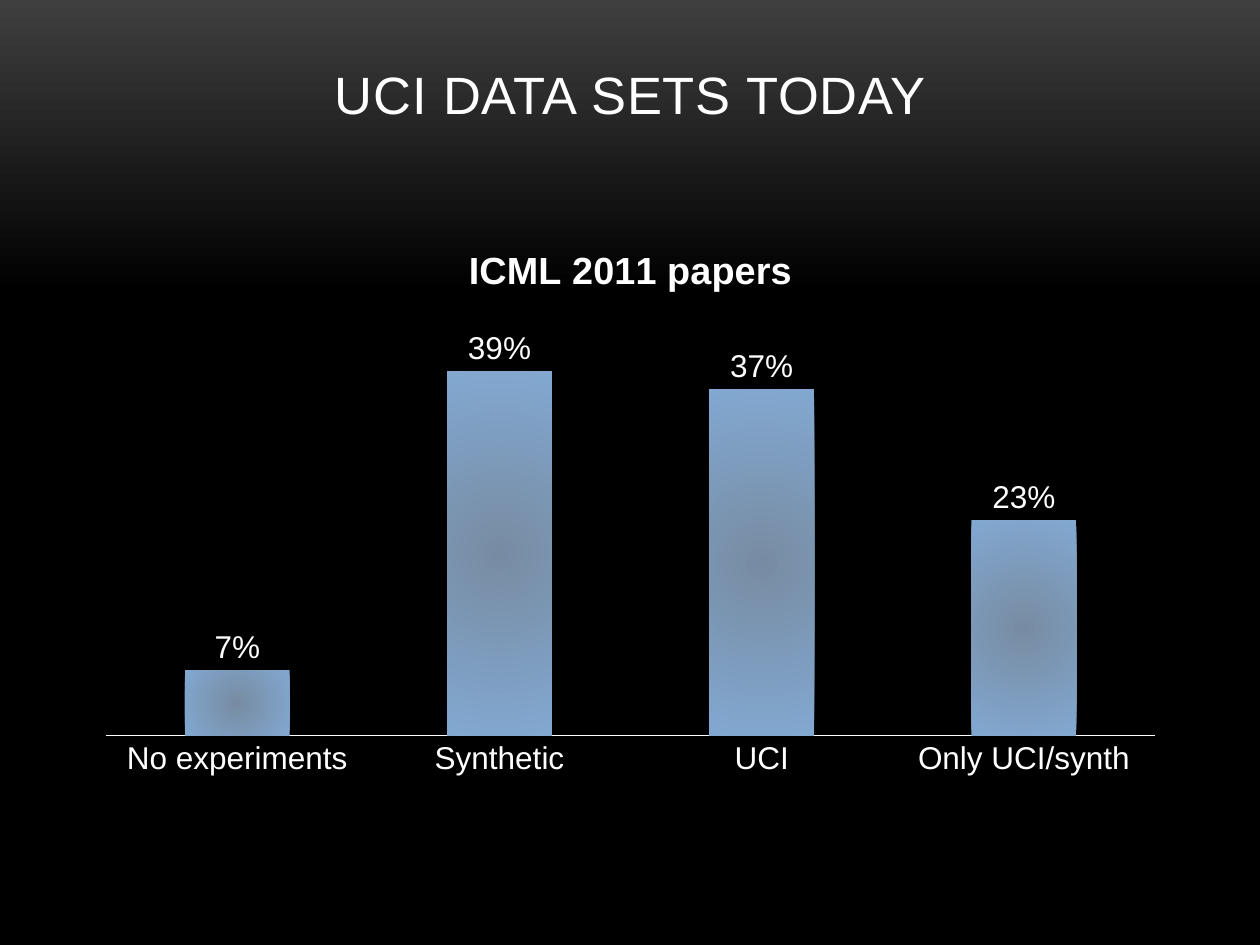
from lxml import etree
from pptx import Presentation
from pptx.chart.data import CategoryChartData
from pptx.dml.color import RGBColor
from pptx.enum.chart import XL_CHART_TYPE, XL_LABEL_POSITION, XL_TICK_MARK
from pptx.enum.text import MSO_ANCHOR, PP_ALIGN
from pptx.oxml import parse_xml
from pptx.oxml.ns import nsdecls, qn
from pptx.util import Inches, Pt

WHITE = RGBColor(0xFF, 0xFF, 0xFF)
BLACK = RGBColor(0, 0, 0)
CHARCOAL = RGBColor(0x3F, 0x3F, 0x3F)
BAR_CENTER = RGBColor(0x77, 0x8C, 0xA3)
BAR_EDGE = RGBColor(0x82, 0xA8, 0xD0)
FONT = "Arial"


def set_gradient(fill, stops):
    fill.gradient()
    for stop, (position, color) in zip(fill.gradient_stops, stops):
        stop.position = position
        stop.color.rgb = color


def set_font(font, size, bold=False):
    font.name = FONT
    font.size = Pt(size)
    font.bold = bold
    font.color.rgb = WHITE


prs = Presentation()
prs.slide_width, prs.slide_height = Inches(10), Inches(7.5)
s = prs.slides.add_slide(prs.slide_layouts[5])

# Background: charcoal fading down to black
bg = s.background.fill
set_gradient(bg, [(0, CHARCOAL), (0.31, BLACK)])
bg.gradient_angle = 270

# Title
title = s.shapes.title
title.left, title.top = Inches(0.67), Inches(0.3)
title.width, title.height = Inches(8.67), Inches(0.74)
tf = title.text_frame
tf.vertical_anchor = MSO_ANCHOR.BOTTOM
p = tf.paragraphs[0]
p.alignment = PP_ALIGN.CENTER
r = p.add_run()
r.text = "UCI DATA SETS TODAY"
set_font(r.font, 30)
r.font._element.set("spc", "50")

# Chart
data = CategoryChartData(number_format="0%")
data.categories = ["No experiments", "Synthetic", "UCI", "Only UCI/synth"]
data.add_series("ICML 2011 papers", [0.07, 0.39, 0.37, 0.23])
chart = s.shapes.add_chart(
    XL_CHART_TYPE.COLUMN_CLUSTERED,
    Inches(0.67), Inches(1.75), Inches(8.67), Inches(4.5), data,
).chart
set_font(chart.font, 18)
chart.has_legend = False
chart.has_title = True
r = chart.chart_title.text_frame.paragraphs[0].add_run()
r.text = "ICML 2011 papers"
set_font(r.font, 21.6, bold=True)

# Axes
cat_axis = chart.category_axis
cat_axis.major_tick_mark = XL_TICK_MARK.NONE
cat_axis.format.line.color.rgb = WHITE
cat_axis.format.line.width = Pt(0.75)
val_axis = chart.value_axis
val_axis.visible = False
val_axis.has_major_gridlines = False
val_axis.tick_labels.number_format = "0%"
val_axis.tick_labels.number_format_is_linked = False

# Bars and labels
plot = chart.plots[0]
plot.gap_width = 150
plot.overlap = -25
plot.vary_by_categories = False
plot.has_data_labels = True
labels = plot.data_labels
labels.show_value = True
labels.number_format = "0%"
labels.number_format_is_linked = False
labels.position = XL_LABEL_POSITION.OUTSIDE_END
set_font(labels.font, 18)

# Radial bar gradient replaces the default linear one
bar_format = plot.series[0].format
set_gradient(bar_format.fill, [(0, BAR_CENTER), (1, BAR_EDGE)])
linear = next(plot.series[0]._element.iter(qn("a:lin")))
radial = parse_xml(f'<a:path {nsdecls("a")} path="circle"/>')
etree.SubElement(radial, qn("a:fillToRect"), l="50000", t="50000", r="50000", b="50000")
linear.getparent().replace(linear, radial)
bar_format.line.fill.background()

prs.save("out.pptx")
